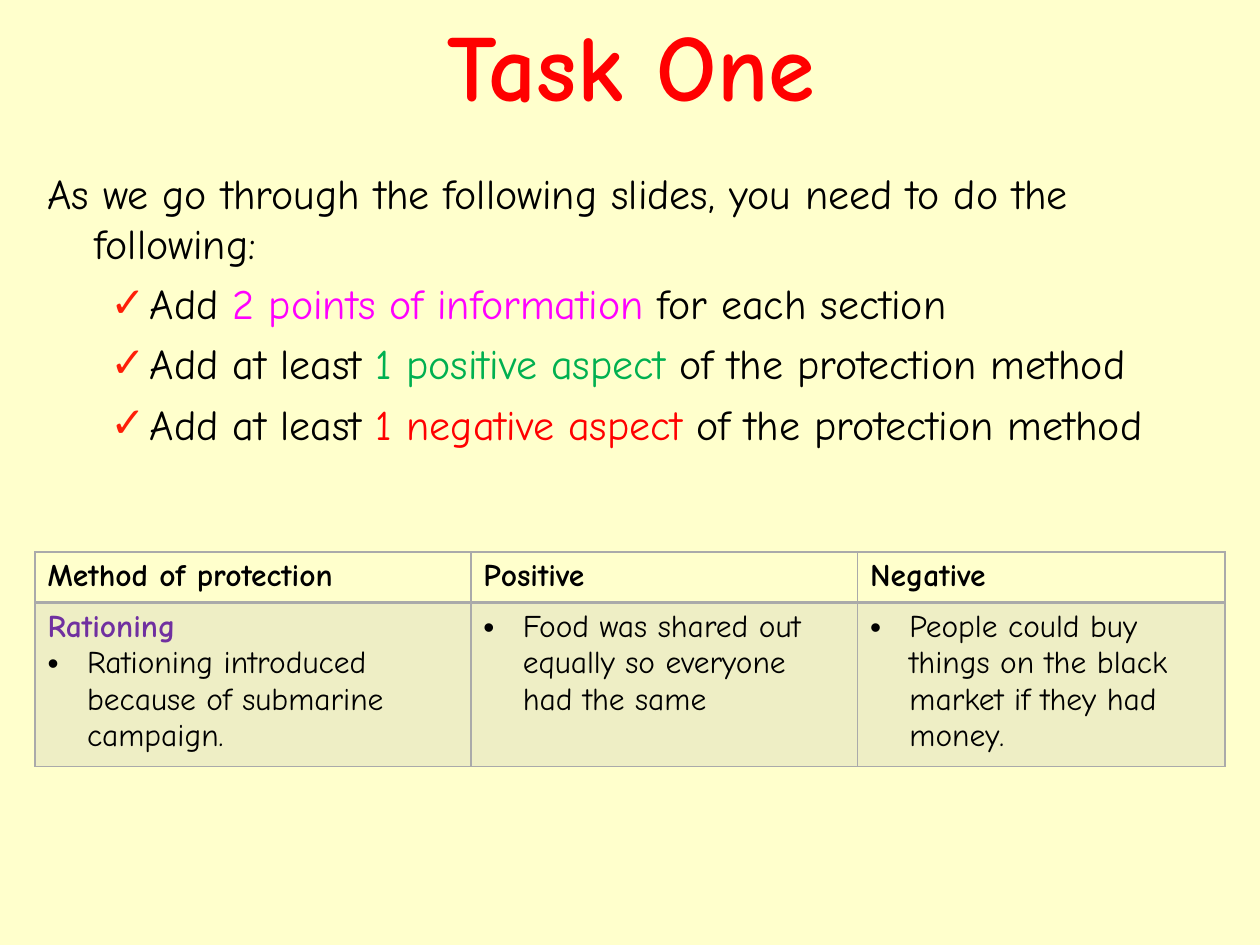
from lxml import etree
from pptx import Presentation
from pptx.dml.color import RGBColor
from pptx.enum import text
from pptx.oxml import ns
from pptx.util import Pt

BLACK, RED, GREY = "000000", "FF0000", "AAAAAA"


def sub(node, tag, **attrs):
    return etree.SubElement(node, ns.qn("a:" + tag), attrs)


def write(para, words, size=18, color=BLACK, bold=False, bullet=None,
          mark=None, left=0, hang=0, before=0):
    """Fill a paragraph; words is a string or a list of (string, colour)."""
    props = para._p.get_or_add_pPr()
    props.set("marL", str(Pt(left)))
    props.set("indent", str(Pt(-hang)))
    if bullet:
        if mark:
            sub(sub(props, "buClr"), "srgbClr", val=mark)
        sub(props, "buFont", typeface="Arial")
        sub(props, "buChar", char=bullet)
    para.space_before = Pt(before)
    for part, tint in [(words, color)] if isinstance(words, str) else words:
        run = para.add_run()
        run.text = part
        run.font.name = "Comic Neue"
        run.font.size = Pt(size)
        run.font.bold = bold
        run.font.color.rgb = RGBColor.from_string(tint)


deck = Presentation()
deck.slide_width, deck.slide_height = Pt(720), Pt(540)
slide = deck.slides.add_slide(deck.slide_layouts[5])
slide.background.fill.solid()
slide.background.fill.fore_color.rgb = RGBColor.from_string("FFFFCC")

# Title
title = slide.shapes.title
title.left, title.top, title.width, title.height = Pt(36.5), Pt(9.5), Pt(648), Pt(77)
frame = title.text_frame
frame.auto_size = text.MSO_AUTO_SIZE.NONE
frame.vertical_anchor = text.MSO_ANCHOR.MIDDLE
frame.margin_bottom = Pt(27)
write(frame.paragraphs[0], "Task One", size=54, color=RED, bold=True)
frame.paragraphs[0].alignment = text.PP_ALIGN.CENTER

# Instructions
body = slide.shapes.add_textbox(Pt(20), Pt(88.5), Pt(680), Pt(68.5)).text_frame
body.word_wrap = True
body.margin_top = Pt(7)
write(body.paragraphs[0],
      "As we go through the following slides, you need to do the following:",
      size=24, left=27, hang=27)
tasks = [
    ("Add ", "2 points of information ", "FF00FF", "for each section"),
    ("Add at least ", "1 positive aspect ", "00B050", "of the protection method"),
    ("Add at least ", "1 negative aspect ", RED, "of the protection method"),
]
for start, key, tint, end in tasks:
    para = body.add_paragraph()
    para.level = 1
    write(para, [(start, BLACK), (key, tint), (end, BLACK)], size=24,
          bullet="✓", mark="FE1F08", left=58.5, hang=22.5, before=5.6)

# Table of methods
heads = ["Method of protection", "Positive", "Negative"]
notes = ["Rationing introduced because of submarine campaign.",
         "Food was shared out equally so everyone had the same",
         "People could buy things on the black market if they had money."]
table = slide.shapes.add_table(2, 3, Pt(20), Pt(315.5), Pt(680), Pt(120)).table
table.first_row = table.horz_banding = False
for col, width in zip(table.columns, (249, 221, 210)):
    col.width = Pt(width)
for row, height in zip(table.rows, (29, 91)):
    row.height = Pt(height)

for i, (head, note) in enumerate(zip(heads, notes)):
    top, low = table.cell(0, i), table.cell(1, i)
    write(top.text_frame.paragraphs[0], head, bold=True)
    top.fill.background()
    para = low.text_frame.paragraphs[0]
    if i == 0:
        write(para, "Rationing", color="7030A0", bold=True)
        para = low.text_frame.add_paragraph()
    write(para, note, bullet="•", left=22.5, hang=22.5)
    low.fill.solid()
    low.fill.fore_color.rgb = RGBColor.from_string(GREY)
    tint = low._tc.tcPr.find(".//" + ns.qn("a:srgbClr"))
    sub(tint, "alpha", val="20000")

    # Cell borders, heavier between the two rows
    for cell, heavy in ((top, "lnB"), (low, "lnT")):
        for n, side in enumerate(("lnL", "lnR", "lnT", "lnB")):
            line = sub(cell._tc.tcPr, side, w=str(Pt(2 if side == heavy else 1)))
            sub(sub(line, "solidFill"), "srgbClr", val=GREY)
            cell._tc.tcPr.insert(n, line)

deck.save("out.pptx")
